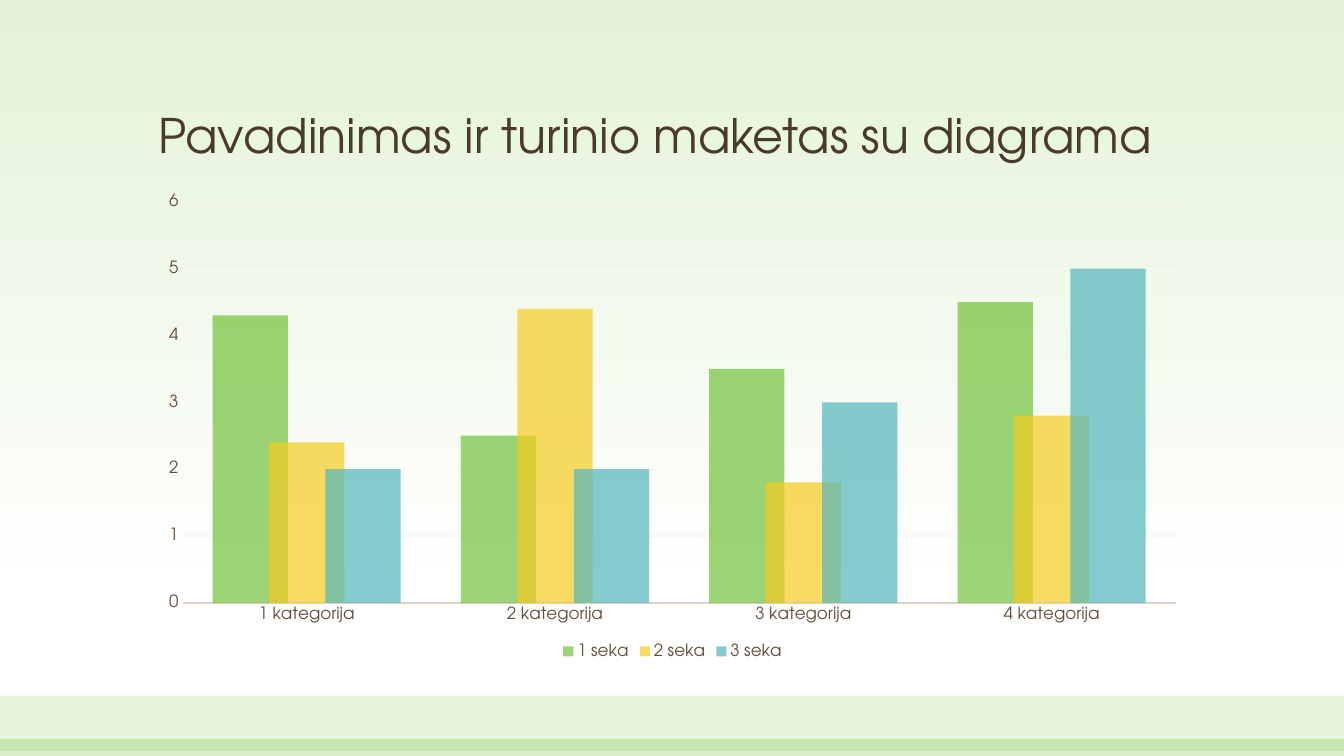
from lxml import etree
from pptx import Presentation
from pptx.chart.data import CategoryChartData
from pptx.dml.color import RGBColor
from pptx.enum.chart import XL_CHART_TYPE as ChartType
from pptx.enum.chart import XL_LEGEND_POSITION as LegendPosition
from pptx.enum.chart import XL_TICK_MARK as TickMark
from pptx.enum.shapes import MSO_SHAPE as Shape
from pptx.enum.text import MSO_ANCHOR as Anchor
from pptx.oxml.ns import qn
from pptx.util import Inches, Pt

TITLE = "Pavadinimas ir turinio maketas su diagrama"
CATEGORIES = ["1 kategorija", "2 kategorija", "3 kategorija", "4 kategorija"]
SERIES = [
    ("1 seka", (4.3, 2.5, 3.5, 4.5), "72C23C"),
    ("2 seka", (2.4, 4.4, 1.8, 2.8), "F4CC20"),
    ("3 seka", (2, 2, 3, 5), "53B6BB"),
]
COLUMN_OPACITY = 70
SKY = [(0, "E3F3D8"), (0.79, "FFFFFF")]
GROUND_COLOR = "72C23C"
GROUND = [(6.9, 0.55, 17), (7.33, 0.17, 28)]  # top, height, opacity in percent

FONT = "TeX Gyre Adventor"
TITLE_COLOR, LABEL_COLOR = "4A3A2A", "624D38"
AXIS_COLOR, GRID_COLOR = "DFD2C6", "F9F6F4"
WIDTH, HEIGHT = 13.33, 7.5
LEFT, CONTENT_WIDTH = 1.47, 10.4


def rgb(color):
    return RGBColor.from_string(color)


def style_font(font, size, color):
    font.name, font.size = FONT, Pt(size)
    font.color.rgb = rgb(color)


def paint(part, fill, color, opacity):
    """Fill a shape or series with a partly transparent colour."""
    fill.solid()
    fill.fore_color.rgb = rgb(color)
    for node in part._element.iter(qn("a:srgbClr")):
        etree.SubElement(node, qn("a:alpha"), val=str(opacity * 1000))


def style_line(line, color, width):
    line.color.rgb = rgb(color)
    line.width = Pt(width)


def add_text(slide, text, box, *, size, color, anchor, spacing):
    frame = slide.shapes.add_textbox(*map(Inches, box)).text_frame
    frame.word_wrap = True
    frame.vertical_anchor = anchor
    paragraph = frame.paragraphs[0]
    paragraph.line_spacing = spacing
    run = paragraph.add_run()
    run.text = text
    style_font(run.font, size, color)


def add_background(slide):
    sky = slide.background.fill
    sky.gradient()
    sky.gradient_angle = 270
    for stop, (position, color) in zip(sky.gradient_stops, SKY):
        stop.position = position
        stop.color.rgb = rgb(color)
    for top, height, opacity in GROUND:
        band = slide.shapes.add_shape(
            Shape.RECTANGLE, 0, Inches(top), Inches(WIDTH), Inches(height))
        band.shadow.inherit = False
        band.line.fill.background()
        paint(band, band.fill, GROUND_COLOR, opacity)


def add_column_chart(slide, box):
    data = CategoryChartData()
    data.categories = CATEGORIES
    for name, values, _ in SERIES:
        data.add_series(name, values)
    chart = slide.shapes.add_chart(
        ChartType.COLUMN_CLUSTERED, *map(Inches, box), data).chart
    chart.has_title = False
    style_font(chart.font, 10, LABEL_COLOR)

    plot = chart.plots[0]
    plot.gap_width, plot.overlap = 80, 25
    plot.vary_by_categories = False
    for columns, (_, _, color) in zip(plot.series, SERIES):
        columns.invert_if_negative = False
        paint(columns, columns.format.fill, color, COLUMN_OPACITY)

    categories, values = chart.category_axis, chart.value_axis
    for axis in (categories, values):
        axis.major_tick_mark = axis.minor_tick_mark = TickMark.NONE
        style_font(axis.tick_labels.font, 12, LABEL_COLOR)
    style_line(categories.format.line, AXIS_COLOR, 1.25)
    values.format.line.fill.background()
    values.minimum_scale, values.maximum_scale, values.major_unit = 0, 6, 1
    style_line(values.major_gridlines.format.line, GRID_COLOR, 0.75)

    chart.has_legend = True
    chart.legend.position = LegendPosition.BOTTOM
    chart.legend.include_in_layout = False
    style_font(chart.legend.font, 12, LABEL_COLOR)


def main():
    deck = Presentation()
    deck.slide_width, deck.slide_height = Inches(WIDTH), Inches(HEIGHT)
    slide = deck.slides.add_slide(deck.slide_layouts[6])
    add_background(slide)
    add_text(slide, TITLE, (LEFT, 0.48, CONTENT_WIDTH, 1.19), size=34,
             color=TITLE_COLOR, anchor=Anchor.BOTTOM, spacing=0.9)
    add_column_chart(slide, (LEFT, 1.83, CONTENT_WIDTH, 4.75))
    deck.save("out.pptx")


if __name__ == "__main__":
    main()
